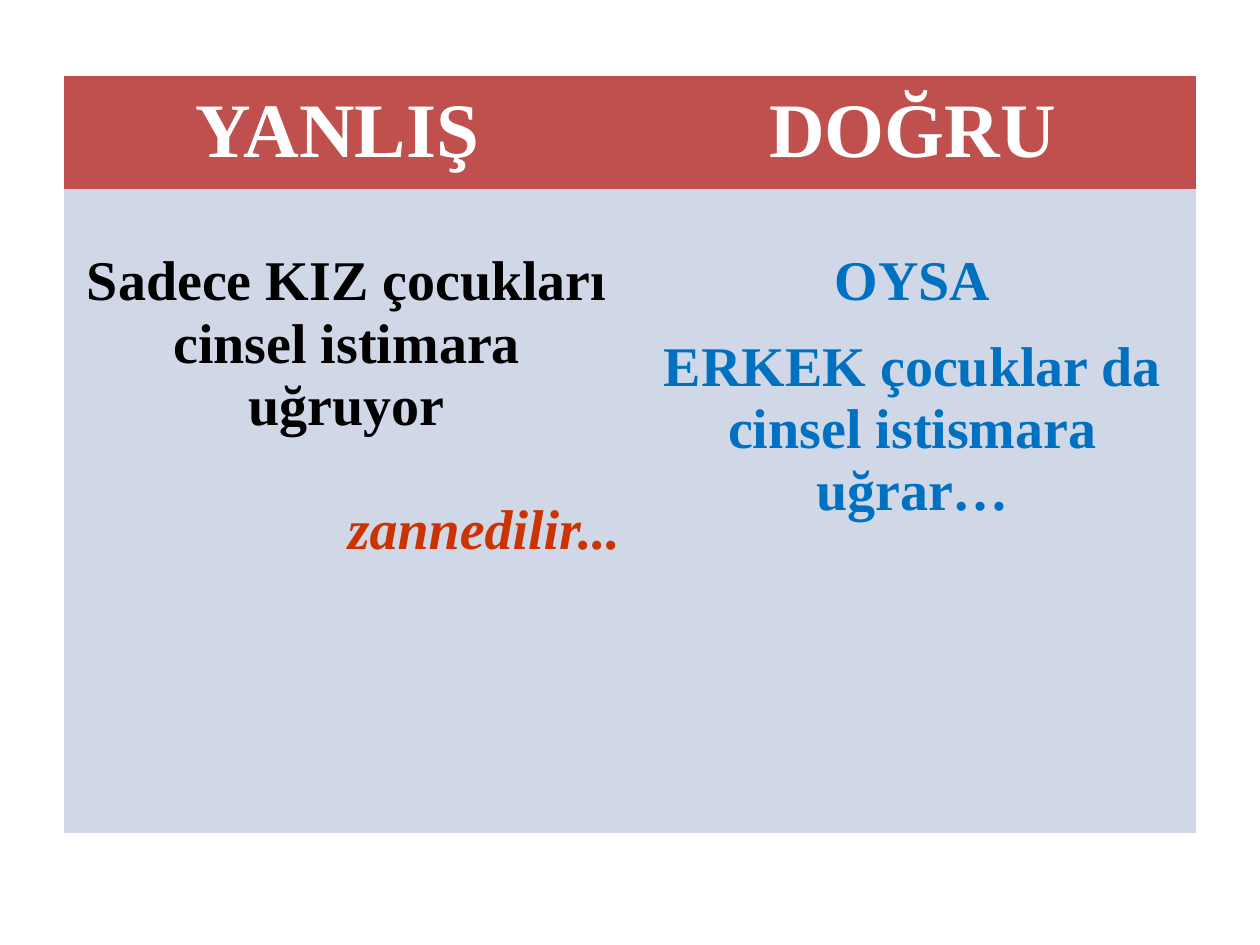
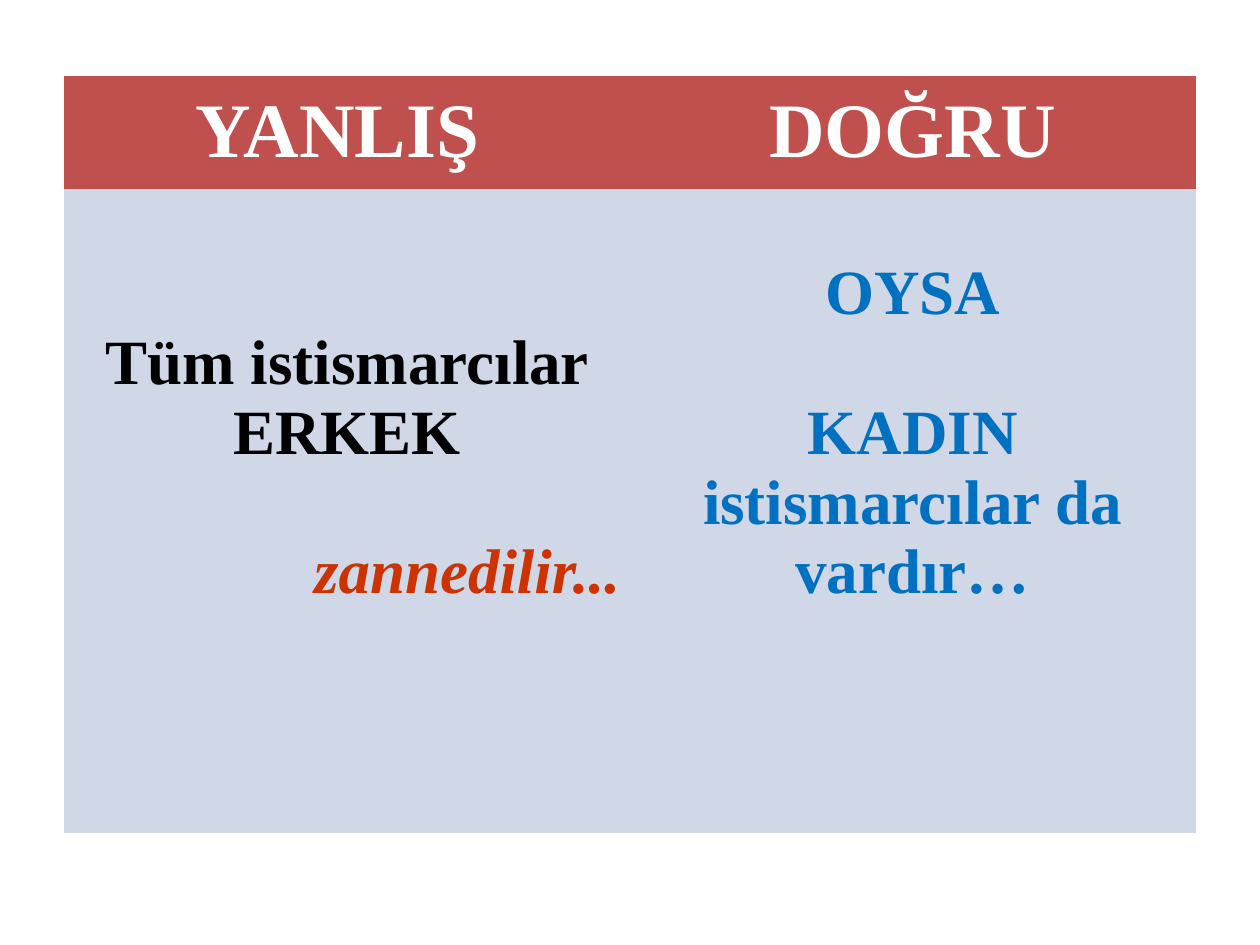
from pptx import Presentation
from pptx import util as u
from pptx.dml.color import RGBColor
from pptx.enum import text
from pptx.oxml.ns import qn

FONT = "Times New Roman"
LINE_HEIGHT = 1.107  # natural line height of the font, per point of size
PLAIN_TABLE_STYLE = "{2D5ABB26-0587-4C30-8999-92F81FD0307C}"

HEADER_FILL, BODY_FILL = "C0504D", "D0D8E8"
WHITE, BLACK, RED, BLUE = "FFFFFF", "000000", "CC3300", "0070C0"
CENTER, RIGHT = text.PP_ALIGN.CENTER, text.PP_ALIGN.RIGHT

TABLE_LEFT, TABLE_TOP = 36.6, 43.2
COLUMN_WIDTH = 323.3
ROW_HEIGHTS = (64.8, 367.9)
SIDE_MARGIN = 5.4

HEADERS = ("YANLIŞ ", "DOĞRU")
HEADER_SIZE = 44
BELIEF_ENDING = "zannedilir..."
FACT_OPENING = "OYSA"

# Offsets are the blank heights above each text, in points of font size.
MYTHS = [
    {"size": 32,
     "belief": "Sadece KIZ çocukları cinsel istimara uğruyor", "belief_offset": 32,
     "fact": "ERKEK çocuklar da cinsel istismara uğrar…", "fact_offset": 12},
    {"size": 36,
     "belief": "Tüm istismarcılar ERKEK", "belief_offset": 72,
     "fact": "KADIN istismarcılar da vardır…", "fact_offset": 36},
]


def color(hex_string):
    return RGBColor.from_string(hex_string)


def fill_cell(cell, fill, paragraphs, size, top=0, line_spacing=None):
    """Write (text, colour, alignment, italic, blank height above) paragraphs."""
    cell.fill.solid()
    cell.fill.fore_color.rgb = color(fill)
    margins = {"margin_left": SIDE_MARGIN, "margin_right": SIDE_MARGIN,
               "margin_top": top, "margin_bottom": 0}
    for name, value in margins.items():
        setattr(cell, name, u.Pt(value))
    frame = cell.text_frame
    for index, (words, ink, alignment, italic, gap) in enumerate(paragraphs):
        paragraph = frame.add_paragraph() if index else frame.paragraphs[0]
        paragraph.alignment = alignment
        paragraph.line_spacing = line_spacing
        paragraph.space_before = u.Pt(gap)
        run = paragraph.add_run()
        run.text = words
        run.font.color.rgb = color(ink)
        font_format = {"name": FONT, "size": u.Pt(size), "bold": True, "italic": italic}
        for name, value in font_format.items():
            setattr(run.font, name, value)


def add_comparison_table(slide):
    frame = slide.shapes.add_table(
        2, 2, u.Pt(TABLE_LEFT), u.Pt(TABLE_TOP),
        u.Pt(2 * COLUMN_WIDTH), u.Pt(sum(ROW_HEIGHTS)))
    next(frame._element.iter(qn("a:tableStyleId"))).text = PLAIN_TABLE_STYLE
    table = frame.table
    table.horz_banding = False
    for column in table.columns:
        column.width = u.Pt(COLUMN_WIDTH)
    for row, height in zip(table.rows, ROW_HEIGHTS):
        row.height = u.Pt(height)
    for cell, header in zip(table.rows[0].cells, HEADERS):
        fill_cell(cell, HEADER_FILL, [(header, WHITE, CENTER, False, 0)],
                  HEADER_SIZE, line_spacing=1.15)
    return table


def add_myth_slide(presentation, myth):
    slide = presentation.slides.add_slide(presentation.slide_layouts[6])
    table = add_comparison_table(slide)
    size = myth["size"]
    blank_line = round(size * LINE_HEIGHT, 1)
    belief = [(myth["belief"], BLACK, CENTER, False, 0),
              (BELIEF_ENDING, RED, RIGHT, True, blank_line)]
    fact = [(FACT_OPENING, BLUE, CENTER, False, 0),
            (myth["fact"], BLUE, CENTER, False, round(myth["fact_offset"] * LINE_HEIGHT, 1))]
    belief_top = round(myth["belief_offset"] * LINE_HEIGHT, 1)
    fill_cell(table.cell(1, 0), BODY_FILL, belief, size, top=belief_top)
    fill_cell(table.cell(1, 1), BODY_FILL, fact, size, top=blank_line)


def main():
    presentation = Presentation()
    presentation.slide_width, presentation.slide_height = u.Pt(720), u.Pt(540)
    for myth in MYTHS:
        add_myth_slide(presentation, myth)
    presentation.save("out.pptx")


if __name__ == "__main__":
    main()
